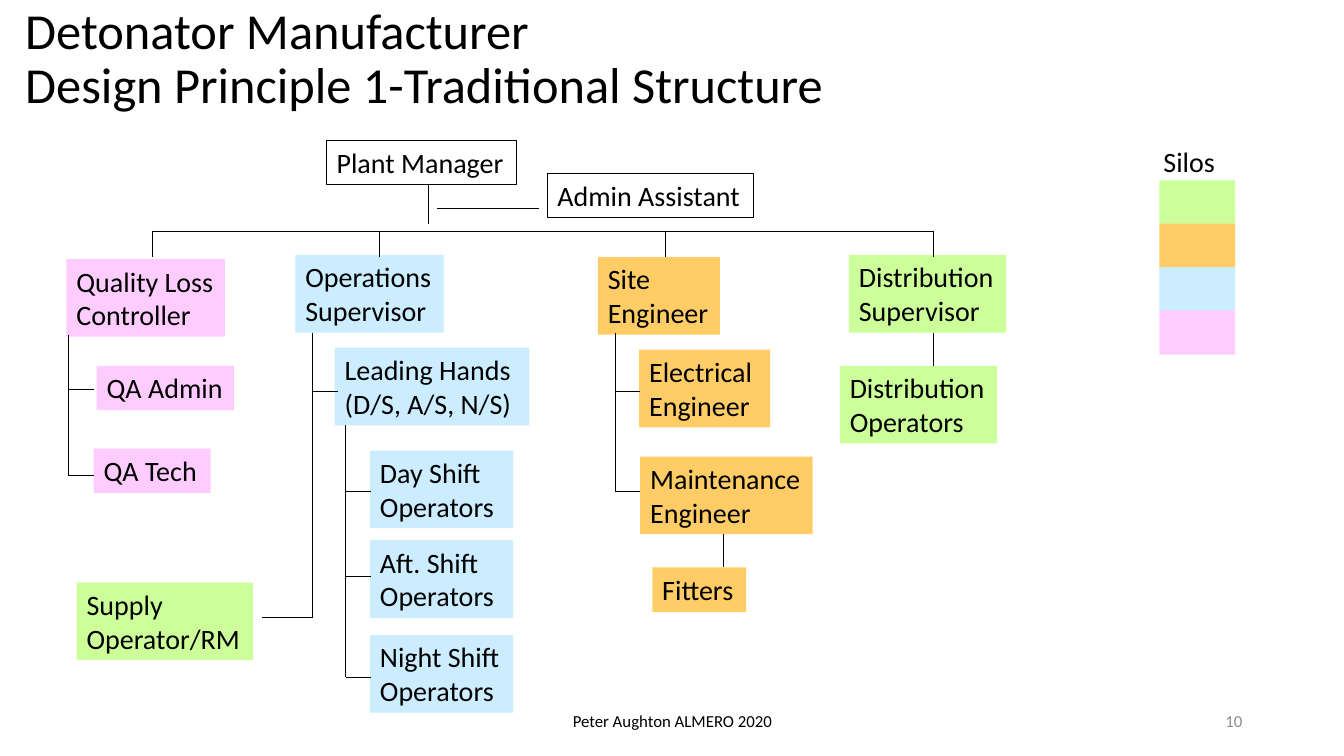
from dataclasses import dataclass

from lxml import etree
from pptx import Presentation
from pptx import util as u
from pptx.dml.color import RGBColor
from pptx.enum import shapes, text
from pptx.oxml.ns import qn


@dataclass(frozen=True)
class Theme:
    """Colours, font and type sizes."""
    font: str = "Calibri"
    ink: str = "000000"
    grey: str = "8C8C8C"
    green: str = "CCFF99"
    amber: str = "FFCC66"
    blue: str = "CCECFF"
    pink: str = "FFCCFF"
    head: int = 36
    body: int = 20
    foot: int = 12
    rule: float = 0.75


class Chart:
    """Draws organisation chart parts on one slide."""

    def __init__(self, slide, theme):
        self.slide = slide
        self.theme = theme

    def fill_text(self, frame, words, size, color=None, align=text.PP_ALIGN.LEFT):
        frame.text = words
        for para in frame.paragraphs:
            para.alignment = align
            for run in para.runs:
                run.font.name = self.theme.font
                run.font.size = u.Pt(size)
                run.font.color.rgb = RGBColor.from_string(color or self.theme.ink)

    def title(self, words, left, top, width, height):
        shape = self.slide.shapes.title
        shape.left, shape.top = u.Inches(left), u.Inches(top)
        shape.width, shape.height = u.Inches(width), u.Inches(height)
        frame = shape.text_frame
        self.fill_text(frame, words, self.theme.head)
        frame.auto_size = text.MSO_AUTO_SIZE.NONE
        frame.vertical_anchor = text.MSO_ANCHOR.MIDDLE
        frame.paragraphs[0].line_spacing = 0.9

    def label(self, words, left, top, width, height, size, color=None,
              align=text.PP_ALIGN.LEFT):
        shape = self.slide.shapes.add_textbox(
            u.Inches(left), u.Inches(top), u.Inches(width), u.Inches(height))
        frame = shape.text_frame
        frame.word_wrap = True
        frame.vertical_anchor = text.MSO_ANCHOR.MIDDLE
        self.fill_text(frame, words, size, color, align)

    def box(self, words, left, top, width, fill=None):
        height = 0.77 if "\n" in words else 0.44
        shape = self.slide.shapes.add_shape(
            shapes.MSO_SHAPE.RECTANGLE, u.Inches(left), u.Inches(top),
            u.Inches(width), u.Inches(height))
        shape.shadow.inherit = False
        if fill:
            shape.fill.solid()
            shape.fill.fore_color.rgb = RGBColor.from_string(fill)
            shape.line.fill.background()
        else:
            shape.fill.background()
            shape.line.color.rgb = RGBColor.from_string(self.theme.ink)
            shape.line.width = u.Pt(self.theme.rule)
        if words:
            frame = shape.text_frame
            frame.word_wrap = False
            frame.vertical_anchor = text.MSO_ANCHOR.TOP
            self.fill_text(frame, words, self.theme.body)

    def line(self, x1, y1, x2, y2):
        link = self.slide.shapes.add_connector(
            shapes.MSO_CONNECTOR.STRAIGHT, u.Inches(x1), u.Inches(y1),
            u.Inches(x2), u.Inches(y2))
        link.line.color.rgb = RGBColor.from_string(self.theme.ink)
        link.line.width = u.Pt(self.theme.rule)
        etree.SubElement(link._element.spPr, qn("a:effectLst"))

    def branch(self, x, top, rungs):
        self.line(x, top, x, rungs[-1])
        for y in rungs:
            self.line(x, y, x + 0.25, y)


def main():
    deck = Presentation()
    deck.slide_width, deck.slide_height = u.Inches(13.33), u.Inches(7.5)
    theme = Theme()
    chart = Chart(deck.slides.add_slide(deck.slide_layouts[5]), theme)

    chart.title("Detonator Manufacturer\vDesign Principle 1-Traditional Structure",
                0.15, 0.18, 9.93, 0.83)

    staff = [
        ("Plant Manager", 3.24, 1.39, 1.88, None),
        ("Admin Assistant", 5.43, 1.72, 2.04, None),
        ("Quality Loss\nController", 0.66, 2.57, 1.57, theme.pink),
        ("QA Admin", 0.96, 3.63, 1.36, theme.pink),
        ("QA Tech", 0.93, 4.45, 1.16, theme.pink),
        ("Operations\nSupervisor", 2.93, 2.53, 1.47, theme.blue),
        ("Leading Hands\n(D/S, A/S, N/S)", 3.32, 3.45, 1.93, theme.blue),
        ("Day Shift\nOperators", 3.67, 4.47, 1.42, theme.blue),
        ("Aft. Shift\nOperators", 3.67, 5.36, 1.42, theme.blue),
        ("Night Shift\nOperators", 3.67, 6.3, 1.42, theme.blue),
        ("Supply\nOperator/RM", 0.76, 5.78, 1.75, theme.green),
        ("Site\nEngineer", 5.93, 2.55, 1.21, theme.amber),
        ("Electrical\nEngineer", 6.34, 3.47, 1.3, theme.amber),
        ("Maintenance\nEngineer", 6.35, 4.53, 1.71, theme.amber),
        ("Fitters", 6.47, 5.63, 0.93, theme.amber),
        ("Distribution\nSupervisor", 8.42, 2.53, 1.56, theme.green),
        ("Distribution\nOperators", 8.33, 3.63, 1.56, theme.green),
    ]
    for job in staff:
        chart.box(*job)

    drops = [1.51, 3.76, 6.6, 9.26]
    chart.line(drops[0], 2.3, drops[-1], 2.3)
    for x in drops:
        chart.line(x, 2.3, x, 2.55)

    chart.branch(0.68, 3.32, [3.86, 4.72])
    chart.branch(3.1, 3.3, [3.88])
    chart.branch(3.43, 4.22, [4.88, 5.72, 6.72])
    chart.branch(6.1, 3.3, [3.88, 4.88])

    links = [
        (4.25, 1.83, 4.25, 2.22),
        (4.33, 2.07, 5.35, 2.07),
        (3.1, 3.88, 3.1, 6.13),
        (2.6, 6.13, 3.1, 6.13),
        (7.18, 5.3, 7.18, 5.63),
        (9.26, 3.3, 9.26, 3.63),
    ]
    for ends in links:
        chart.line(*ends)

    chart.label("Silos", 11.44, 1.39, 0.95, 0.43, theme.body)
    silos = [theme.green, theme.amber, theme.blue, theme.pink]
    for row, fill in enumerate(silos):
        chart.box("", 11.5, 1.79 + row * 0.43, 0.75, fill)

    chart.label("Peter Aughton ALMERO 2020", 4.42, 6.95, 4.5, 0.4, theme.foot,
                align=text.PP_ALIGN.CENTER)
    chart.label("10", 9.42, 6.95, 3, 0.4, theme.foot, theme.grey,
                text.PP_ALIGN.RIGHT)
    deck.save("out.pptx")


if __name__ == "__main__":
    main()
